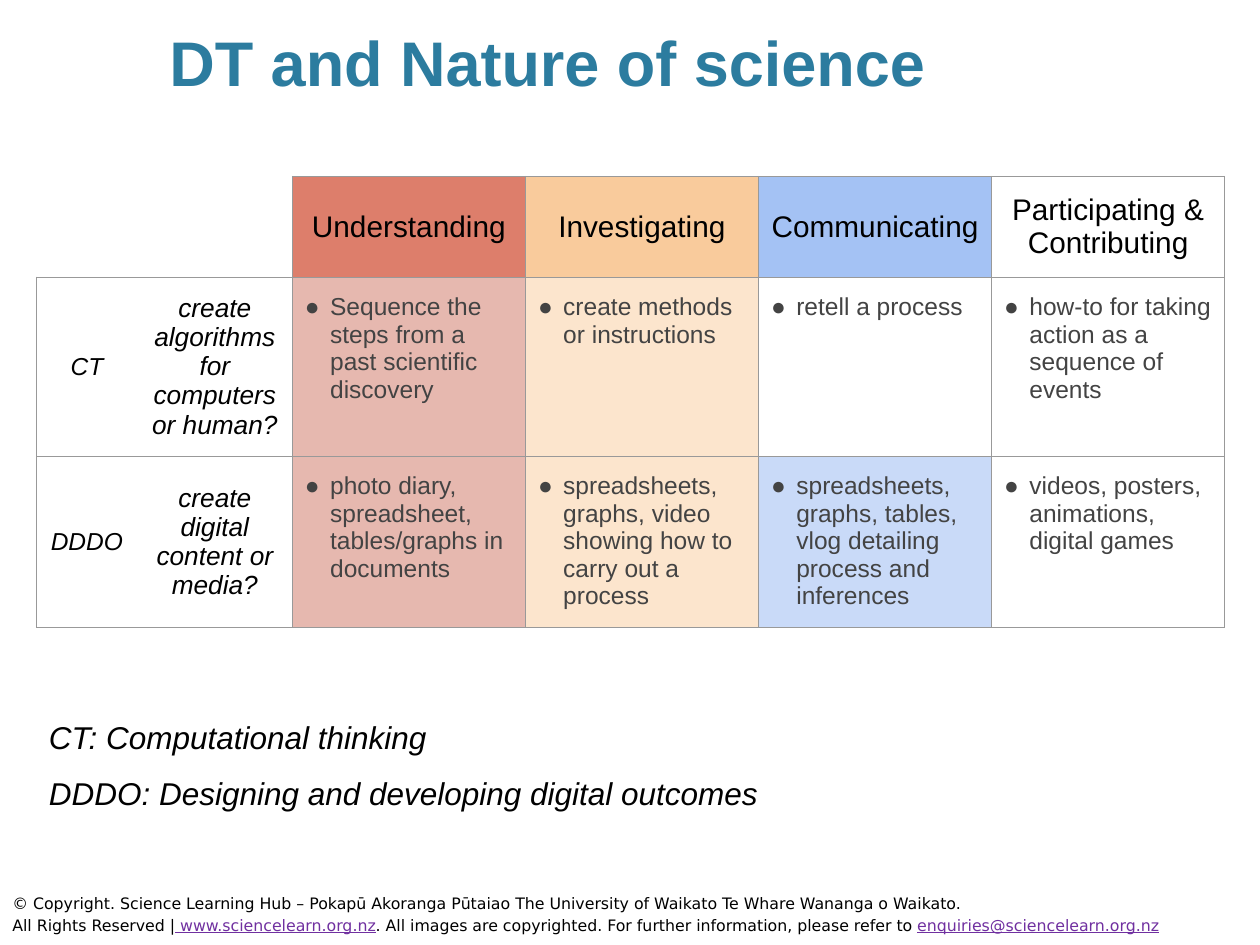
"""Build the slide that links digital technology progress to the nature of science."""
from lxml.etree import SubElement
from pptx import Presentation
from pptx.dml.color import RGBColor as Color
from pptx.enum.text import MSO_ANCHOR as Anchor, MSO_AUTO_SIZE as AutoSize, PP_ALIGN as Align
from pptx.oxml.ns import qn
from pptx.util import Inches, Pt

THEME = {
    "border": "999999",
    "border_width": 0.75,
    "bullet": "434343",
    "title": {"name": "Arial", "size": 36, "bold": True, "color": "2C7C9F"},
    "header": {"name": "Arial", "size": 17, "color": "000000"},
    "code": {"name": "Arial", "size": 14, "italic": True, "color": "000000"},
    "question": {"name": "Arial", "size": 15, "italic": True, "color": "000000"},
    "example": {"name": "Arial", "size": 14, "color": "434343"},
    "legend": {"name": "Arial", "size": 18, "italic": True, "color": "000000"},
    "footer": {"name": "DejaVu Sans", "size": 9, "color": "000000"},
    "link": {"name": "DejaVu Sans", "size": 9, "underline": True, "color": "7030A0"},
}

TITLE = "DT and Nature of science"
ROWS = [
    ["", "", "Understanding", "Investigating", "Communicating", "Participating & Contributing"],
    ["CT", "create algorithms for computers or human?",
     "Sequence the steps from a past scientific discovery", "create methods or instructions",
     "retell a process", "how-to for taking action as a sequence of events"],
    ["DDDO", "create digital content or media?",
     "photo diary, spreadsheet, tables/graphs in documents",
     "spreadsheets, graphs, video showing how to carry out a process",
     "spreadsheets, graphs, tables, vlog detailing process and inferences",
     "videos, posters, animations, digital games"],
]
FILLS = [
    [None, None, "DD7E6B", "F9CB9C", "A4C2F4", None],
    [None, None, "E6B8AF", "FCE5CD", None, None],
    [None, None, "E6B8AF", "FCE5CD", "C9DAF8", None],
]
COLUMN_WIDTHS = [0.8, 1.23] + [1.85] * 4
ROW_HEIGHTS = [0.8, 1.42, 1.36]
LEGEND = [
    [("CT: Computational thinking", "legend")],
    [("DDDO: Designing and developing digital outcomes", "legend")],
]
FOOTER = [
    [("© Copyright. Science Learning Hub – Pokapū Akoranga Pūtaiao "
      "The University of Waikato Te Whare Wananga o Waikato.", "footer")],
    [("All Rights Reserved |", "footer"), (" www.sciencelearn.org.nz", "link"),
     (". All images are copyrighted. For further information, please refer to ", "footer"),
     ("enquiries@sciencelearn.org.nz", "link")],
]


def add_run(paragraph, text, style):
    run = paragraph.add_run()
    run.text = text
    for name, value in THEME[style].items():
        if name == "color":
            run.font.color.rgb = Color.from_string(value)
        else:
            setattr(run.font, name, Pt(value) if name == "size" else value)


def write_frame(frame, paragraphs, anchor=Anchor.TOP, **formats):
    frame.word_wrap = True
    frame.auto_size = AutoSize.NONE
    frame.vertical_anchor = anchor
    for side in ("left", "top", "right", "bottom"):
        setattr(frame, f"margin_{side}", Inches(0.1))
    for index, runs in enumerate(paragraphs):
        paragraph = frame.paragraphs[0] if index == 0 else frame.add_paragraph()
        for name, value in formats.items():
            if index or not name.startswith("space"):
                setattr(paragraph, name, value)
        for text, style in runs:
            add_run(paragraph, text, style)


def place(shape, left, top, width, height):
    for name, value in zip(("left", "top", "width", "height"), (left, top, width, height)):
        setattr(shape, name, Inches(value))


def add_bullet(paragraph):
    properties = paragraph._p.get_or_add_pPr()
    properties.set("marL", str(Inches(0.2)))
    properties.set("indent", str(-Inches(0.2)))
    color = SubElement(properties, qn("a:buClr"))
    SubElement(color, qn("a:srgbClr"), val=THEME["bullet"])
    SubElement(properties, qn("a:buFont"), typeface="Arial")
    SubElement(properties, qn("a:buChar"), char="●")


def draw_borders(cell, row, column):
    edges = {
        "L": column >= 2 or (column == 0 and row > 0),
        "R": column >= 1,
        "T": row > 0 or column >= 2,
        "B": True,
    }
    properties = cell._tc.get_or_add_tcPr()
    for side, visible in edges.items():
        line = SubElement(properties, qn(f"a:ln{side}"), w=str(Pt(THEME["border_width"])))
        fill = SubElement(line, qn("a:solidFill" if visible else "a:noFill"))
        if visible:
            SubElement(fill, qn("a:srgbClr"), val=THEME["border"])


def cell_style(row, column):
    if row == 0:
        return "header"
    return ("code", "question")[column] if column < 2 else "example"


def fill_cell(cell, row, column):
    style = cell_style(row, column)
    margins = {"left": 0.1, "right": 0.1, "top": 0.13, "bottom": 0.13}
    for side, margin in margins.items():
        setattr(cell, f"margin_{side}", Inches(margin))
    draw_borders(cell, row, column)
    color = FILLS[row][column]
    if color:
        cell.fill.solid()
        cell.fill.fore_color.rgb = Color.from_string(color)
    else:
        cell.fill.background()
    paragraph = cell.text_frame.paragraphs[0]
    if style == "example":
        add_bullet(paragraph)
    else:
        cell.vertical_anchor = Anchor.MIDDLE
        paragraph.alignment = Align.CENTER
    if ROWS[row][column]:
        add_run(paragraph, ROWS[row][column], style)


def add_matrix(slide):
    frame = slide.shapes.add_table(
        len(ROWS), len(COLUMN_WIDTHS), Inches(0.29), Inches(1.4),
        Inches(sum(COLUMN_WIDTHS)), Inches(sum(ROW_HEIGHTS)))
    table = frame.table
    table.first_row = table.horz_banding = False
    for column, width in zip(table.columns, COLUMN_WIDTHS):
        column.width = Inches(width)
    for row, height in enumerate(ROW_HEIGHTS):
        table.rows[row].height = Inches(height)
        for column in range(len(COLUMN_WIDTHS)):
            fill_cell(table.cell(row, column), row, column)


def add_text(slide, box, paragraphs, **formats):
    shape = slide.shapes.add_textbox(*map(Inches, box))
    write_frame(shape.text_frame, paragraphs, **formats)


def main():
    presentation = Presentation()
    presentation.slide_width, presentation.slide_height = Inches(10), Inches(7.5)
    slide = presentation.slides.add_slide(presentation.slide_layouts[5])
    title = slide.shapes.title
    place(title, 0.41, 0.08, 7.87, 0.81)
    write_frame(title.text_frame, [[(TITLE, "title")]], Anchor.BOTTOM, alignment=Align.CENTER)
    add_matrix(slide)
    add_text(slide, (0.29, 5.6, 9.41, 0.95), LEGEND, space_before=Pt(10), space_after=Pt(10))
    add_text(slide, (0, 6.97, 10, 0.53), FOOTER, line_spacing=1.15)
    presentation.save("out.pptx")


if __name__ == "__main__":
    main()
